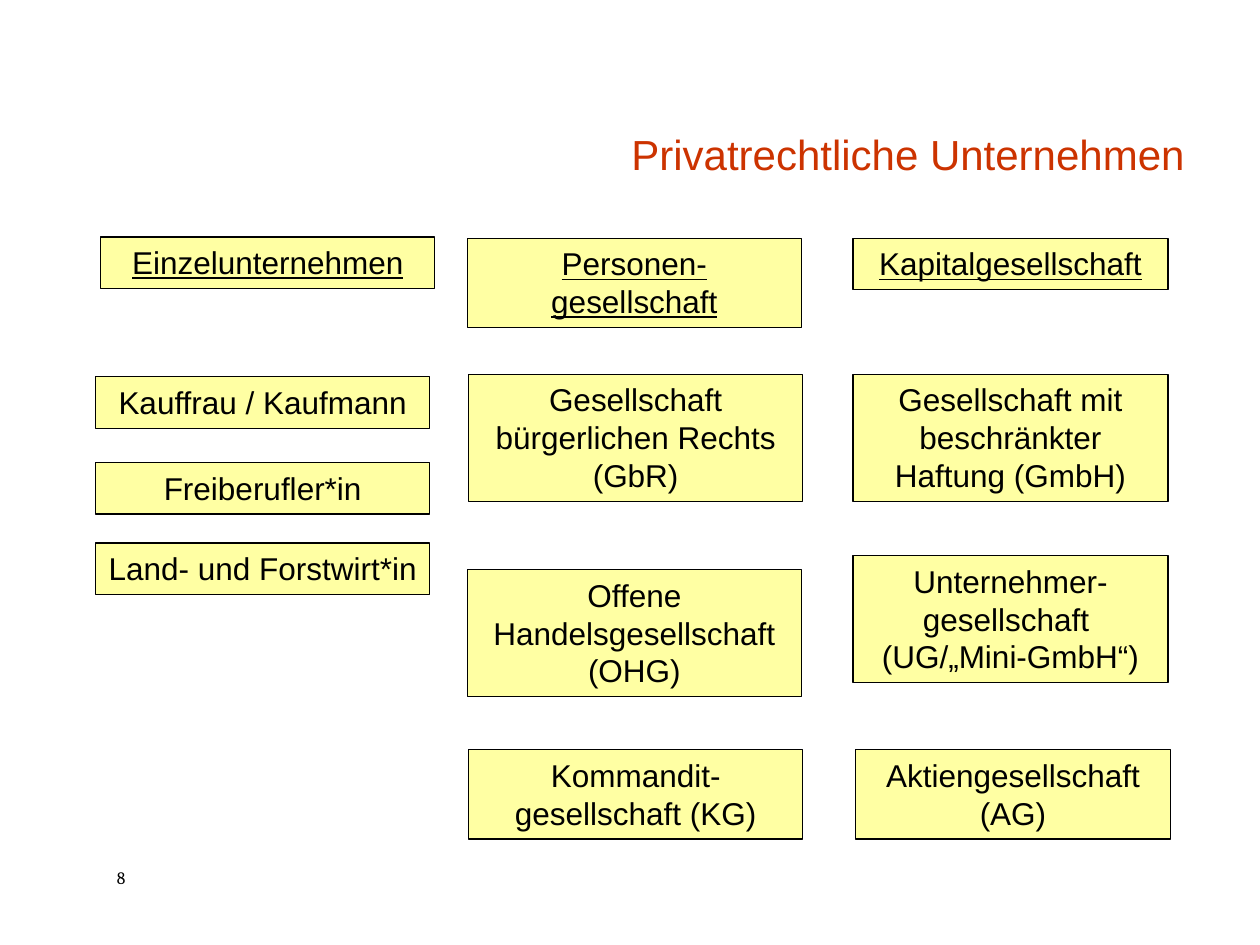
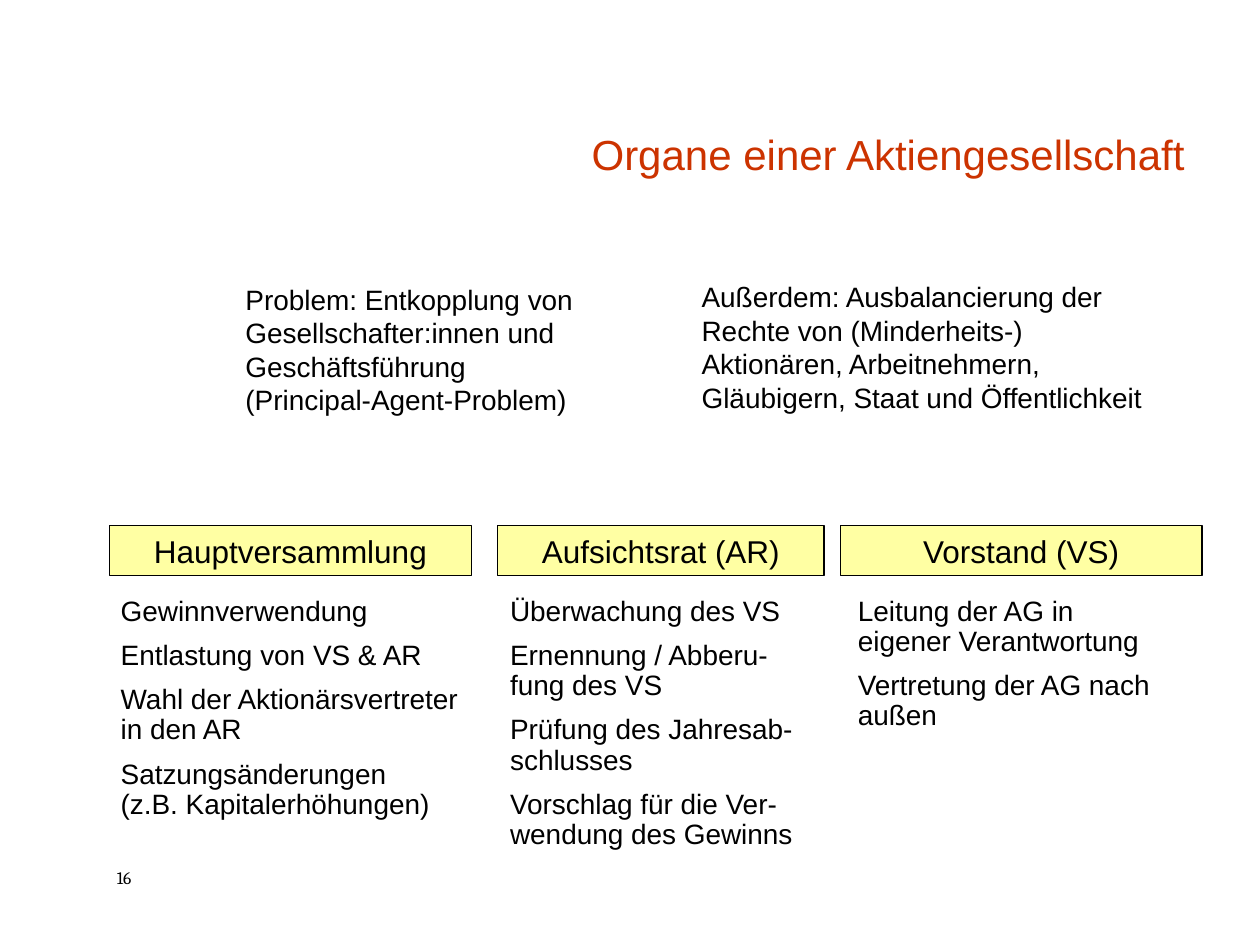
import pptx
import pptx.util
import pptx.dml.color
import pptx.enum.shapes
import pptx.enum.text
from dataclasses import dataclass

EMU_PER_PX = 9144  # 100 px to the inch
ALIGN = pptx.enum.text.PP_ALIGN
ANCHOR = pptx.enum.text.MSO_ANCHOR


@dataclass(frozen=True)
class Theme:
    title_color: str = "CC3300"
    text_color: str = "000000"
    box_fill: str = "FFFFA3"
    box_line: str = "000000"
    font: str = "Arial"
    number_font: str = "Cambria"
    title_size: int = 24
    box_size: int = 18
    body_size: int = 16
    number_size: int = 10
    line_width: float = 0.75
    tight_spacing: float = 0.9


def px(length):
    return pptx.util.Emu(length * EMU_PER_PX)


def rgb(color):
    return pptx.dml.color.RGBColor.from_string(color)


class Deck:
    def __init__(self, theme):
        self.theme = theme
        self.prs = pptx.Presentation()
        self.prs.slide_width, self.prs.slide_height = px(1000), px(750)
        self.slide = None

    def new_slide(self, title, number):
        self.slide = self.prs.slides.add_slide(self.prs.slide_layouts[6])
        t = self.theme
        self.text((83, 683, 67, 27), [number], t.number_size, font=t.number_font)
        self.text((209, 42, 741, 105), [title], t.title_size, color=t.title_color,
                  align=ALIGN.RIGHT, anchor=ANCHOR.BOTTOM, spacing=t.tight_spacing)

    def text(self, area, paragraphs, size, **style):
        holder = self.slide.shapes.add_textbox(*map(px, area))
        self.fill_frame(holder.text_frame, paragraphs, size, **style)

    def box(self, area, label, underline=False):
        t = self.theme
        holder = self.slide.shapes.add_shape(
            pptx.enum.shapes.MSO_SHAPE.RECTANGLE, *map(px, area))
        holder.shadow.inherit = False
        holder.fill.solid()
        holder.fill.fore_color.rgb = rgb(t.box_fill)
        holder.line.color.rgb = rgb(t.box_line)
        holder.line.width = pptx.util.Pt(t.line_width)
        self.fill_frame(holder.text_frame, [label], t.box_size,
                        align=ALIGN.CENTER, underline=underline)

    def fill_frame(self, frame, paragraphs, size, font=None, color=None,
                   align=ALIGN.LEFT, anchor=ANCHOR.TOP, spacing=1.0, underline=False):
        frame.word_wrap = True
        frame.vertical_anchor = anchor
        for index, content in enumerate(paragraphs):
            paragraph = frame.add_paragraph() if index else frame.paragraphs[0]
            paragraph.alignment = align
            paragraph.line_spacing = spacing
            if index:
                paragraph.space_before = pptx.util.Pt(size / 2)
            for line_index, line in enumerate(content.split("\n")):
                if line_index:
                    paragraph.add_line_break()
                run = paragraph.add_run()
                run.text = line
                run.font.size = pptx.util.Pt(size)
                run.font.name = font or self.theme.font
                run.font.color.rgb = rgb(color or self.theme.text_color)
                if underline:
                    run.font.underline = True

    def save(self):
        self.prs.save("out.pptx")


def add_legal_forms(deck):
    deck.new_slide("Privatrechtliche Unternehmen", "8")
    one_line, two_lines, three_lines = 41, 71, 101

    # Each column: width, heading, then the legal forms below it (x, y, height, label)
    columns = [
        (265, (80, 188, one_line, "Einzelunternehmen"), [
            (76, 299, one_line, "Kauffrau / Kaufmann"),
            (76, 367, one_line, "Freiberufler*in"),
            (76, 431, one_line, "Land- und Forstwirt*in")]),
        (265, (371, 189, two_lines, "Personen-gesellschaft"), [
            (372, 297, three_lines, "Gesellschaft bürgerlichen Rechts (GbR)"),
            (371, 452, three_lines, "Offene Handelsgesellschaft (OHG)"),
            (372, 595, two_lines, "Kommandit-gesellschaft (KG)")]),
        (250, (677, 189, one_line, "Kapitalgesellschaft"), [
            (677, 297, three_lines, "Gesellschaft mit beschränkter Haftung (GmbH)"),
            (677, 441, three_lines, "Unternehmer-gesellschaft \n(UG/„Mini-GmbH“)"),
            (679, 595, two_lines, "Aktiengesellschaft (AG)")]),
    ]
    for width, heading, forms in columns:
        for x, y, height, label in [heading, *forms]:
            deck.box((x, y, width, height), label, underline=label == heading[-1])


def add_company_bodies(deck):
    deck.new_slide("Organe einer Aktiengesellschaft", "16")
    theme = deck.theme

    # Reasons for having separate bodies
    deck.text((185, 219, 283, 118),
              ["Problem: Entkopplung von Gesellschafter:innen und Geschäftsführung\n"
               "(Principal-Agent-Problem)"], theme.body_size)
    deck.text((547, 217, 371, 145),
              ["Außerdem: Ausbalancierung der Rechte von (Minderheits-) Aktionären, "
               "Arbeitnehmern, Gläubigern, Staat und Öffentlichkeit"], theme.body_size)

    # Each body: box x and width, name, duties x, width and height, duties
    bodies = [
        (87, 287, "Hauptversammlung", 86, 297, 196, [
            "Gewinnverwendung",
            "Entlastung von VS & AR",
            "Wahl der Aktionärsvertreter in den AR",
            "Satzungsänderungen \n(z.B. Kapitalerhöhungen)"]),
        (395, 259, "Aufsichtsrat (AR)", 395, 259, 220, [
            "Überwachung des VS",
            "Ernennung / Abberu-fung des VS",
            "Prüfung des Jahresab-schlusses",
            "Vorschlag für die Ver-wendung des Gewinns"]),
        (667, 287, "Vorstand (VS)", 671, 259, 120, [
            "Leitung der AG in eigener Verantwortung",
            "Vertretung der AG nach außen"]),
    ]
    for x, width, name, duties_x, duties_width, duties_height, duties in bodies:
        deck.box((x, 417, width, 40), name)
        deck.text((duties_x, 469, duties_width, duties_height), duties,
                  theme.body_size, spacing=theme.tight_spacing)


def main():
    deck = Deck(Theme())
    add_legal_forms(deck)
    add_company_bodies(deck)
    deck.save()


if __name__ == "__main__":
    main()
